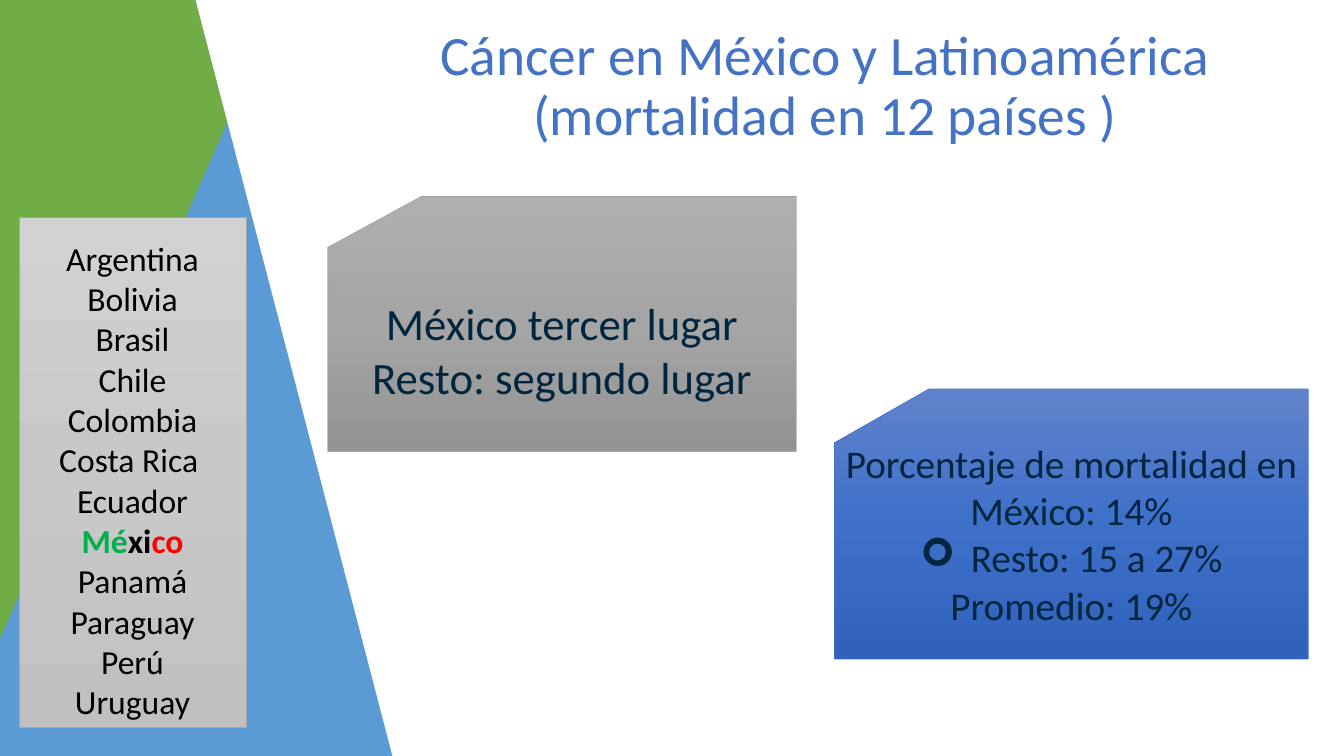
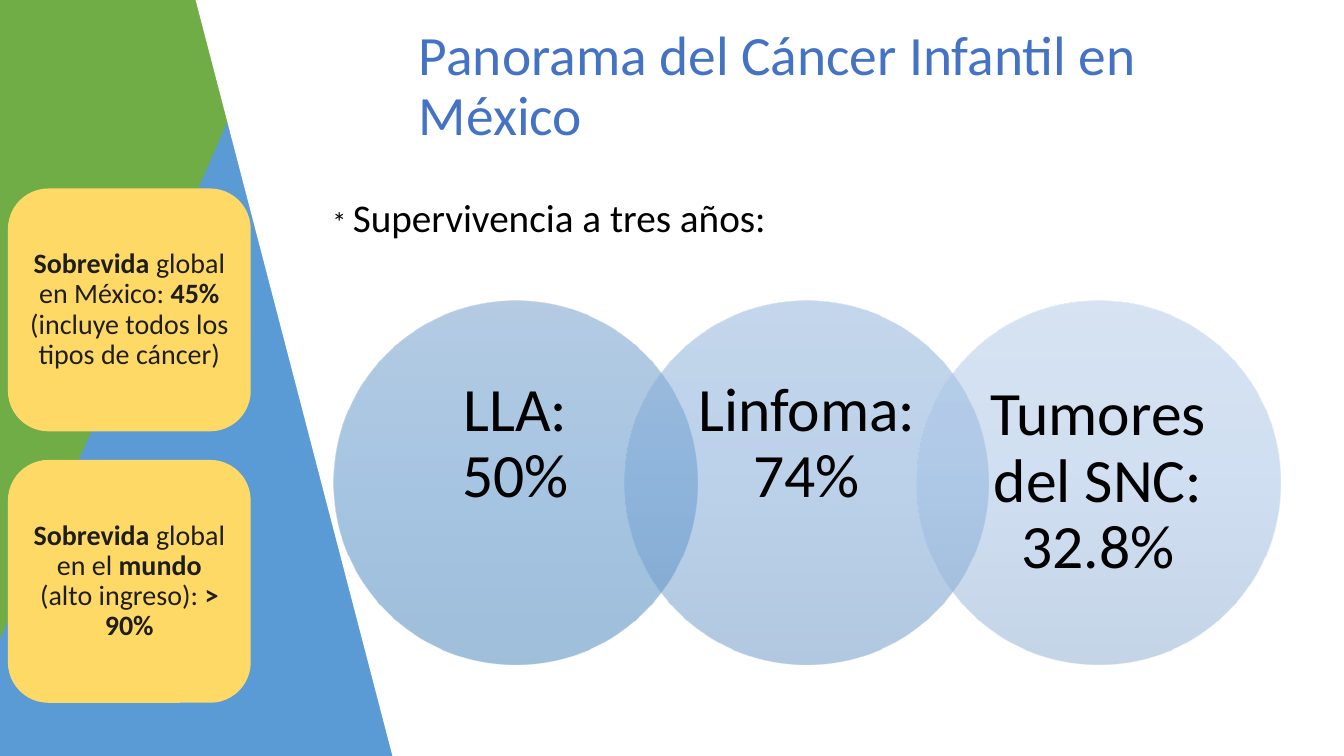
"""Build two slides on cancer mortality and survival in Mexico and Latin America."""
from lxml import etree
from pptx import Presentation
from pptx import util as u
from pptx.dml.color import RGBColor
from pptx.enum import shapes, text
from pptx.oxml.ns import qn

FONT = "Calibri"
HUES = {
    "green": "70AD47", "blue": "5B9BD5", "white": "FFFFFF", "title": "4472C4",
    "navy": "00253E", "gray": "A5A5A5", "black": "000000", "ink": "1E1E1E",
    "gold": "FFD966", "leaf": "00B050", "red": "FF0000",
}
FADES = {
    "royal": ("6183CB", "3E70CA", "3062BB"),
    "steel": ("AFAFAF", "A5A5A5", "939393"),
    "silver": ("D2D2D2", "C8C8C8", "C0C0C0"),
    "deep": ("6B99C9", "4D8DC7", "3E7EB7"),
    "mid": ("8BB0D9", "77A6D7", "6493C5"),
    "pale": ("B1C9E7", "A2C1E6", "8CABD1"),
}
SHAPE = shapes.MSO_SHAPE
MID = text.MSO_ANCHOR.MIDDLE
TOP = text.MSO_ANCHOR.TOP
CENTER = text.PP_ALIGN.CENTER
LEFT = text.PP_ALIGN.LEFT
BOLD = {"bold": True}


def rgb(name):
    return RGBColor.from_string(HUES[name])


def write(shape, paras, size=24, color="black", bold=False, align=CENTER,
          anchor=MID, lead=None, pad=(0.25, 0.13, 0.25, 0.13)):
    frame = shape.text_frame
    frame.word_wrap = True
    frame.vertical_anchor = anchor
    (frame.margin_left, frame.margin_top,
     frame.margin_right, frame.margin_bottom) = map(u.Cm, pad)
    for i, runs in enumerate(paras):
        para = frame.add_paragraph() if i else frame.paragraphs[0]
        para.alignment = align
        para.line_spacing = lead
        for words, own in [(runs, {})] if isinstance(runs, str) else runs:
            run = para.add_run()
            run.text = words
            font = run.font
            font.name = FONT
            font.size = u.Pt(own.get("size", size))
            font.bold = own.get("bold", bold)
            font.color.rgb = rgb(own.get("color", color))
    return frame.paragraphs


def point(para, mark, cm):
    props = para._p.get_or_add_pPr()
    props.set("marL", str(u.Cm(cm)))
    props.set("indent", str(-u.Cm(cm)))
    etree.SubElement(props, qn("a:buFont"), typeface="Wingdings")
    etree.SubElement(props, qn("a:buChar"), char=mark)


def paint(shape, color, line=None):
    shape.shadow.inherit = False
    shape.fill.solid()
    shape.fill.fore_color.rgb = rgb(color)
    edge(shape, line)


def edge(shape, line):
    if line:
        shape.line.color.rgb = rgb(line)
        shape.line.width = u.Pt(0.5)
    else:
        shape.line.fill.background()


def fade(shape, name, line=None, alpha=None):
    shape.shadow.inherit = False
    shape.fill.gradient()
    shape.fill.gradient_angle = 270
    stops = shape._element.spPr.find(".//" + qn("a:gsLst"))
    for old in list(stops):
        stops.remove(old)
    for i, hue in enumerate(FADES[name]):
        stop = etree.SubElement(stops, qn("a:gs"), pos=str(i * 50000))
        tint = etree.SubElement(stop, qn("a:srgbClr"), val=hue)
        if alpha:
            etree.SubElement(tint, qn("a:alpha"), val=str(alpha * 1000))
    edge(shape, line)


def form(slide, kind, *box):
    return slide.shapes.add_shape(kind, *map(u.Cm, box))


def label(slide, box, paras, **fmt):
    return write(slide.shapes.add_textbox(*map(u.Cm, box)), paras, **fmt)


def facet(slide, color, *spots):
    first, *rest = [(u.Cm(x), u.Cm(y)) for x, y in spots]
    pen = slide.shapes.build_freeform(*first)
    pen.add_line_segments(rest, close=True)
    paint(pen.convert_to_shape(), color)


def start(deck, title, left, align):
    slide = deck.slides.add_slide(deck.slide_layouts[6])
    facet(slide, "green", (0, 0), (5.08, 0), (5.84, 3.02), (0, 17.12))
    facet(slide, "blue", (5.79, 2.95), (10.01, 19.05), (0, 19.05), (0, 16.1))
    slant = form(slide, SHAPE.PARALLELOGRAM, 4.93, 0, 6.93, 19.05)
    slant.adjustments[0] = 0.716
    slant._element.spPr.xfrm.set("flipV", "1")
    paint(slant, "white")
    label(slide, (left, 1.17, 31.95 - left, 2.08), [title], size=39.6,
          color="title", align=align, lead=0.9)
    return slide


def deaths(deck):
    slide = start(deck, "Cáncer en México y Latinoamérica (mortalidad en 12 países )",
                  9.63, CENTER)
    share = form(slide, SHAPE.FLOWCHART_CARD, 21.03, 9.8, 11.94, 6.81)
    fade(share, "royal", "title")
    lines = write(share, ["Porcentaje de mortalidad en México: 14%",
                          "Resto: 15 a 27%", "Promedio: 19%"],
                  size=28, color="navy", pad=(0.25, 0.13, 0.25, 1))
    point(lines[1], "➢", 1.27)

    rank = form(slide, SHAPE.FLOWCHART_CARD, 8.26, 4.95, 11.81, 6.43)
    fade(rank, "steel", "gray")
    write(rank, ["México tercer lugar Resto: segundo lugar"], size=32, color="navy")

    lands = form(slide, SHAPE.RECTANGLE, 0.48, 5.49, 5.72, 12.85)
    fade(lands, "silver", "gray")
    flag = [("Mé", {"color": "leaf", **BOLD}), ("xi", BOLD),
            ("co", {"color": "red", **BOLD})]
    write(lands, ["Argentina", "Bolivia", "Brasil", "Chile", "Colombia",
                  "Costa Rica ", "Ecuador", flag, "Panamá", "Paraguay",
                  "Perú", "Uruguay"], anchor=TOP, pad=(0.25, 0.5, 0.25, 0))


def outlook(deck):
    slide = start(deck, "Panorama del Cáncer Infantil en México", 10.31, LEFT)
    label(slide, (8.13, 4.75, 16.94, 1.45),
          [[("* ", {"size": 20}), ("Supervivencia a tres años:", {})]],
          size=28, align=LEFT, anchor=TOP)

    rates = [("LLA: 50%", "deep", 2.05), ("Linfoma: 74%", "mid", 2.05),
             ("Tumores del SNC: 32.8%", "pale", 0.15)]
    for i, (words, name, base) in enumerate(rates):
        disc = form(slide, SHAPE.OVAL, 8.41 + 7.34 * i, 7.57, 9.17, 9.17)
        fade(disc, name, alpha=50)
        write(disc, [words], size=44, lead=0.9, pad=(0.5, 0.15, 0.5, base))

    notes = [
        [("Sobrevida ", BOLD), ("global en México: ", {}), ("45% ", BOLD),
         ("(incluye todos los tipos de cáncer)", {})],
        [("Sobrevida ", BOLD), ("global en el ", {}), ("mundo ", BOLD),
         ("(alto ingreso): ", {}), ("> 90%", BOLD)],
    ]
    for i, runs in enumerate(notes):
        tile = form(slide, SHAPE.ROUNDED_RECTANGLE, 0.2, 4.75 + 6.84 * i, 6.12, 6.12)
        paint(tile, "gold")
        write(tile, [runs], size=20, color="ink", lead=0.9, pad=(0.2,) * 4)


def main():
    deck = Presentation()
    deck.slide_width, deck.slide_height = u.Cm(33.87), u.Cm(19.05)
    deaths(deck)
    outlook(deck)
    deck.save("out.pptx")


if __name__ == "__main__":
    main()
